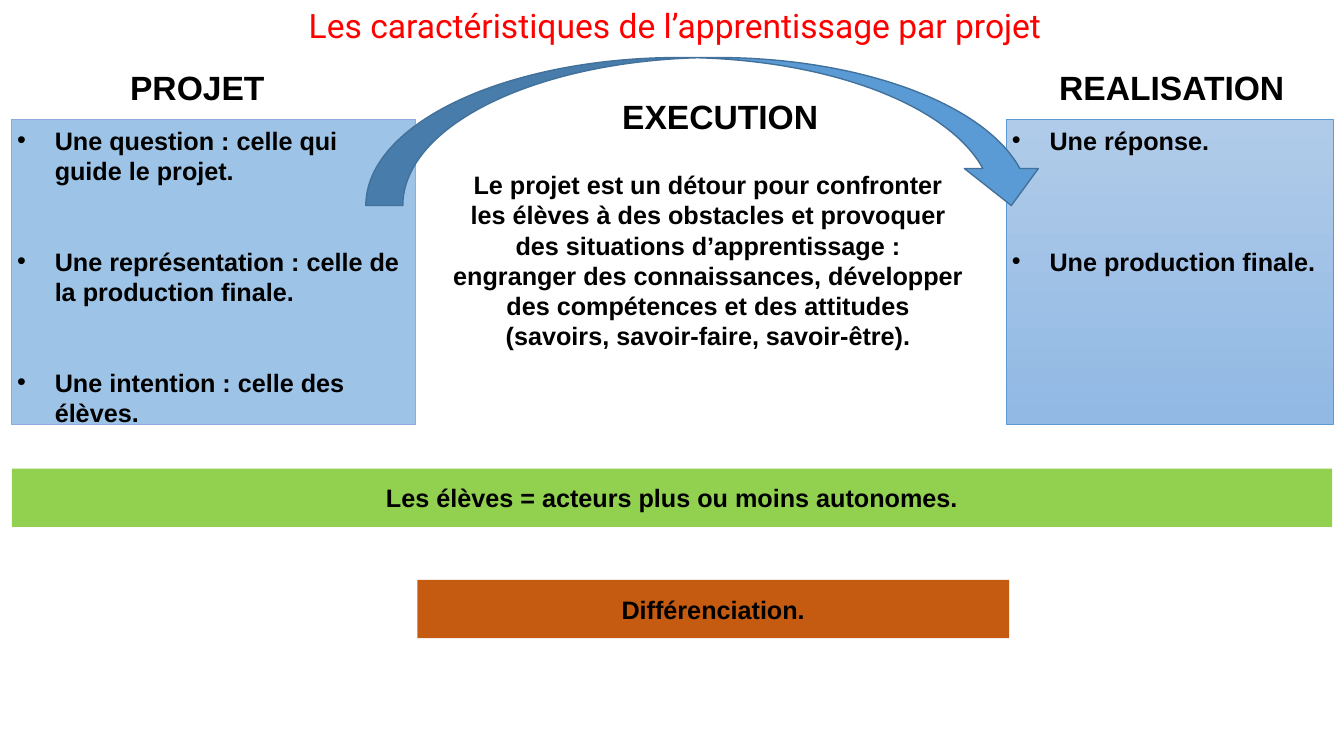
from dataclasses import dataclass

from pptx import Presentation
from pptx.dml.color import RGBColor
from pptx.enum.shapes import MSO_SHAPE
from pptx.enum.text import MSO_ANCHOR, MSO_AUTO_SIZE, PP_ALIGN
from pptx.util import Cm, Pt

RECTANGLE = MSO_SHAPE.RECTANGLE
CURVED_ARROW = MSO_SHAPE.CURVED_DOWN_ARROW
TOP, MIDDLE = MSO_ANCHOR.TOP, MSO_ANCHOR.MIDDLE
LEFT, CENTER = PP_ALIGN.LEFT, PP_ALIGN.CENTER
NO_AUTOFIT = MSO_AUTO_SIZE.NONE
TWO_CONTENT = 3


@dataclass(frozen=True)
class Theme:
    title_font: str = "Roboto"
    body_font: str = "Arial"
    heading_size: int = 24
    body_size: int = 18
    line_ratio: float = 1.2
    title: str = "FF0000"
    ink: str = "000000"
    project_fill: str = "9DC3E6"
    project_line: str = "8FAADC"
    result_top: str = "B0CBE9"
    result_bottom: str = "91B9E4"
    arrow_fill: str = "5B9BD5"
    arrow_line: str = "42719B"
    pupils_band: str = "92D050"
    support_band: str = "C55A11"


THEME = Theme()


@dataclass(frozen=True)
class Area:
    left: float
    top: float
    width: float
    height: float

    def lengths(self) -> tuple:
        return tuple(Cm(n) for n in (self.left, self.top, self.width, self.height))


@dataclass(frozen=True)
class Label:
    text: str
    area: Area
    size: int = THEME.body_size
    align: PP_ALIGN = CENTER


@dataclass(frozen=True)
class Band:
    text: str
    area: Area
    fill: str


@dataclass(frozen=True)
class BulletBox:
    items: tuple
    area: Area
    skipped_lines: int
    fills: tuple
    line: str
    line_width: float


TITLE = Label("Les caractéristiques de l’apprentissage par projet",
              Area(7.65, 0, 18.97, 1.27), THEME.heading_size, LEFT)
LABELS = (
    Label("PROJET", Area(3.15, 1.55, 4.39, 1.22), THEME.heading_size, LEFT),
    Label("REALISATION", Area(25.02, 1.55, 9.02, 1.22), THEME.heading_size),
    Label("Le projet est un détour pour confronter les élèves à des obstacles et "
          "provoquer des situations d’apprentissage : engranger des connaissances, "
          "développer des compétences et des attitudes (savoirs, savoir-faire, "
          "savoir-être).", Area(11.28, 4.14, 13.13, 4.67)),
    Label("EXECUTION", Area(11.71, 2.29, 12.88, 2.21), THEME.heading_size),
)
BULLET_BOXES = (
    BulletBox(("Une question : celle qui guide le projet.",
               "Une représentation : celle de la production finale.",
               "Une intention : celle des élèves."),
              Area(0.3, 3.02, 10.16, 7.67), 2,
              (THEME.project_fill,), THEME.project_line, 0.75),
    BulletBox(("Une réponse.", "Une production finale."),
              Area(25.37, 3.02, 8.23, 7.67), 3,
              (THEME.result_top, THEME.result_bottom), THEME.arrow_fill, 0.5),
)
BANDS = (
    Band("Les élèves = acteurs plus ou moins autonomes.",
         Area(0.3, 11.81, 33.27, 1.47), THEME.pupils_band),
    Band("Différenciation.", Area(10.52, 14.61, 14.91, 1.47), THEME.support_band),
)
ARROW = Area(9.22, 1.45, 17.2, 3.73)


def set_values(target, values: dict) -> None:
    for name, value in values.items():
        setattr(target, name, value)


def place(box, area: Area) -> None:
    set_values(box, dict(zip(("left", "top", "width", "height"), area.lengths())))


def write(box, texts: tuple, size: int = THEME.body_size, align: PP_ALIGN = CENTER,
          anchor: MSO_ANCHOR = TOP, wrap: bool = True, font: str = THEME.body_font,
          color: str = THEME.ink, bold: bool = True, skipped_lines: int = 0) -> None:
    frame = box.text_frame
    inset = Cm(0.13)
    set_values(frame, {"margin_left": inset, "margin_right": inset,
                       "margin_top": inset, "margin_bottom": inset,
                       "auto_size": NO_AUTOFIT, "word_wrap": wrap,
                       "vertical_anchor": anchor})
    pitch = size * THEME.line_ratio
    for index, text in enumerate(texts):
        para = frame.add_paragraph() if index else frame.paragraphs[0]
        gap = skipped_lines * pitch if index else 0
        set_values(para, {"alignment": align, "line_spacing": Pt(pitch),
                          "space_before": Pt(gap), "space_after": Pt(0)})
        span = para.add_run()
        span.text = text
        set_values(span.font, {"name": font, "size": Pt(size), "bold": bold})
        span.font.color.rgb = RGBColor.from_string(color)


def paint(box, fill: str) -> None:
    box.fill.solid()
    box.fill.fore_color.rgb = RGBColor.from_string(fill)


def outline(box, color: str, width: float) -> None:
    box.line.color.rgb = RGBColor.from_string(color)
    box.line.width = Pt(width)


def fill_bullet_box(box, bullet_box: BulletBox) -> None:
    place(box, bullet_box.area)
    if len(bullet_box.fills) == 1:
        paint(box, bullet_box.fills[0])
    else:
        box.fill.gradient()
        box.fill.gradient_angle = 270
        for stop, color in zip(box.fill.gradient_stops, bullet_box.fills):
            stop.color.rgb = RGBColor.from_string(color)
    outline(box, bullet_box.line, bullet_box.line_width)
    write(box, bullet_box.items, align=LEFT, skipped_lines=bullet_box.skipped_lines)
    for para in box.text_frame.paragraphs:
        properties = para._p.get_or_add_pPr()
        properties.set("marL", str(Cm(0.95)))
        properties.set("indent", str(-Cm(0.95)))


def add_plain_shape(page, kind: MSO_SHAPE, area: Area, fill: str):
    shape = page.shapes.add_shape(kind, *area.lengths())
    shape.shadow.inherit = False
    paint(shape, fill)
    return shape


def add_band(page, band: Band) -> None:
    shape = add_plain_shape(page, RECTANGLE, band.area, band.fill)
    shape.line.fill.background()
    write(shape, (band.text,), anchor=MIDDLE)


def add_label(page, label: Label) -> None:
    box = page.shapes.add_textbox(*label.area.lengths())
    write(box, (label.text,), label.size, label.align)


def main() -> None:
    deck = Presentation()
    deck.slide_width, deck.slide_height = Cm(33.87), Cm(19.05)
    page = deck.slides.add_slide(deck.slide_layouts[TWO_CONTENT])

    # Title and the two bulleted boxes
    title, *bodies = page.placeholders
    place(title, TITLE.area)
    write(title, (TITLE.text,), TITLE.size, TITLE.align, wrap=False,
          font=THEME.title_font, color=THEME.title, bold=False)
    for body, bullet_box in zip(bodies, BULLET_BOXES):
        fill_bullet_box(body, bullet_box)

    # Arrow from project to result
    arrow = add_plain_shape(page, CURVED_ARROW, ARROW, THEME.arrow_fill)
    outline(arrow, THEME.arrow_line, 1)

    # Headings and central text
    for label in LABELS:
        add_label(page, label)

    # Bands at the bottom
    for band in BANDS:
        add_band(page, band)

    deck.save("out.pptx")


if __name__ == "__main__":
    main()
